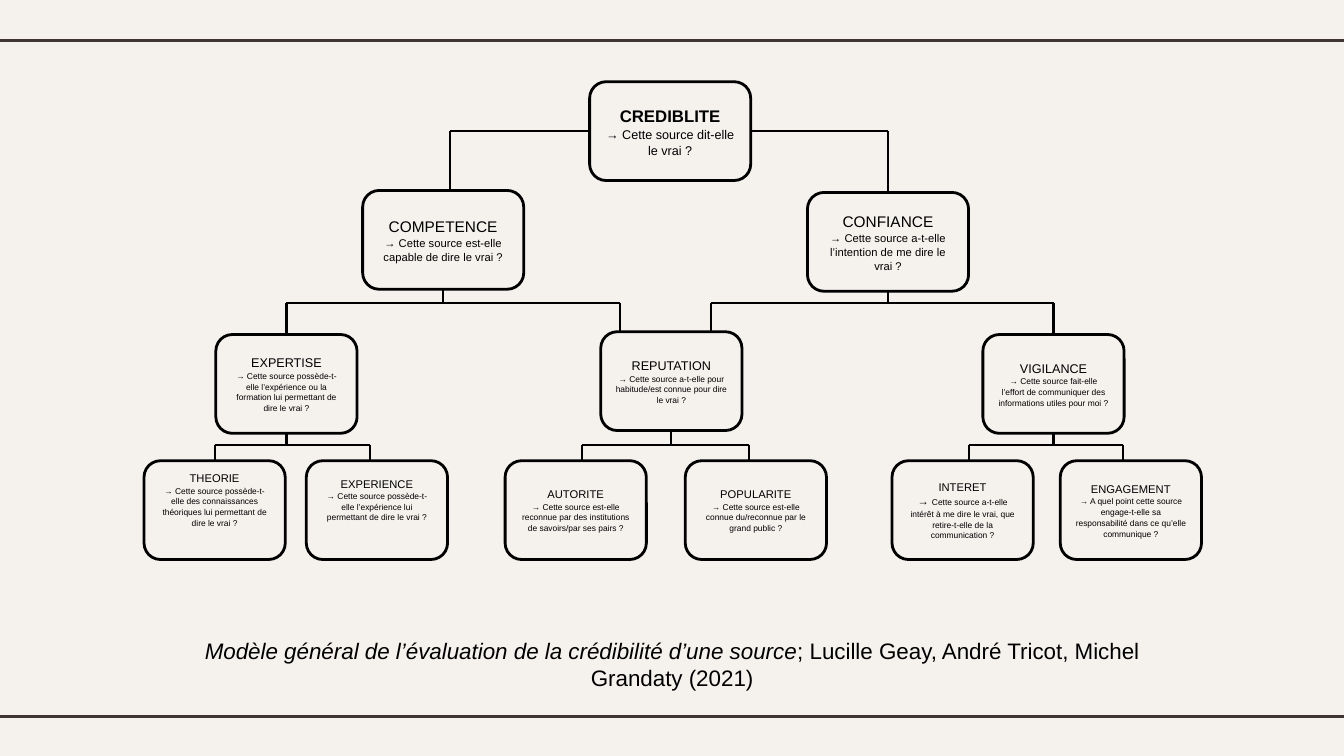
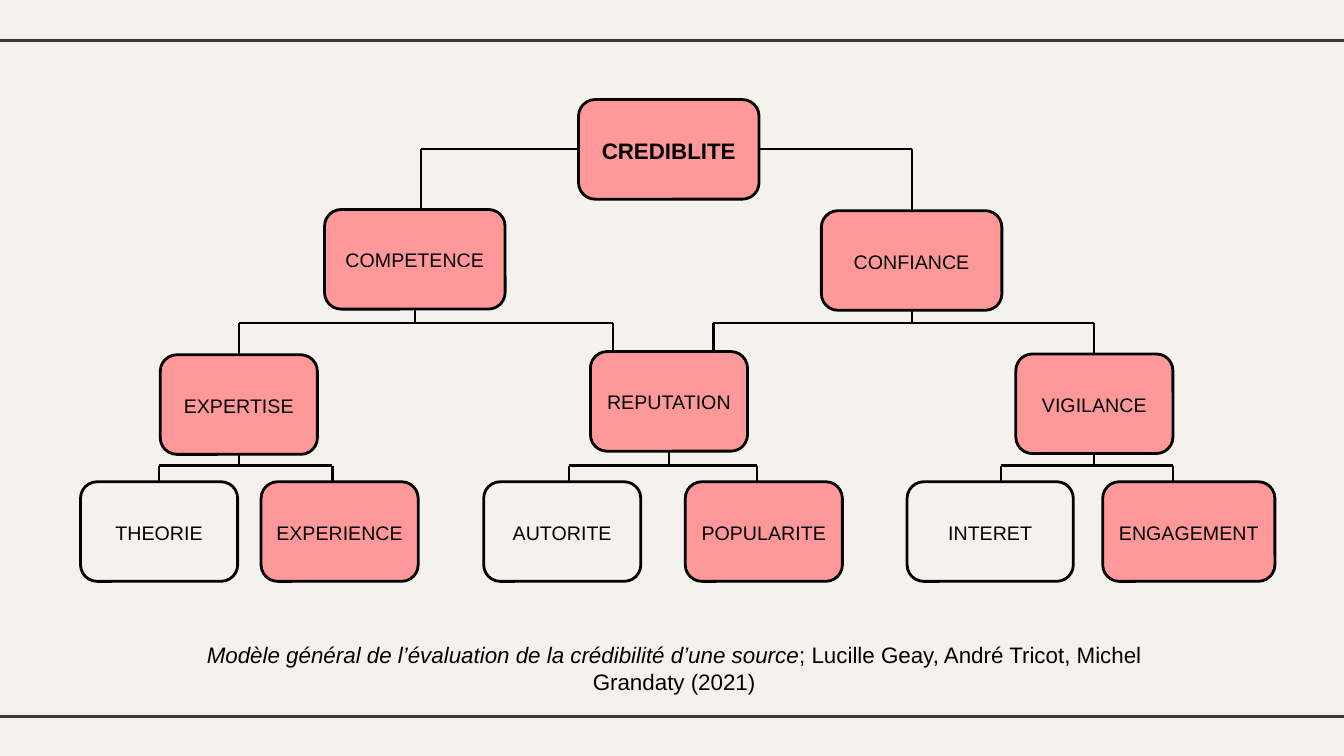
from dataclasses import dataclass

from lxml.etree import SubElement
from pptx import Presentation
from pptx.dml.color import RGBColor
from pptx.enum.shapes import MSO_CONNECTOR as Link, MSO_SHAPE as Shape
from pptx.enum.text import MSO_ANCHOR as Anchor, MSO_AUTO_SIZE as AutoSize, PP_ALIGN as Align
from pptx.oxml.ns import qn
from pptx.util import Cm, Pt

PAPER = RGBColor(0xF5, 0xF2, 0xEE)
INK = RGBColor(0x00, 0x00, 0x00)
RULE = RGBColor(0x3F, 0x35, 0x33)
PINK = RGBColor(0xFF, 0x99, 0x99)
FONT = "Arial"
WIDTH, HEIGHT = Cm(33.87), Cm(19.05)
TOP, LEFT, BOTTOM, RIGHT = range(4)

ROOT = "CREDIBLITE"
ROOT_CHILDREN = (("COMPETENCE", LEFT), ("CONFIANCE", RIGHT))
MIDDLE_BRANCHES = {
    "COMPETENCE": ("EXPERTISE", "REPUTATION"),
    "CONFIANCE": ("REPUTATION", "VIGILANCE"),
}
LEAF_BRANCHES = {
    "EXPERTISE": ("THEORIE", "EXPERIENCE"),
    "REPUTATION": ("AUTORITE", "POPULARITE"),
    "VIGILANCE": ("INTERET", "ENGAGEMENT"),
}


@dataclass
class Node:
    left: float
    top: float
    width: float
    title_size: int
    question: str = ""
    question_size: int = 6
    arrow_size: int = 6
    bottom_inset: float = 0.13
    fill: RGBColor = PAPER


@dataclass
class Tree:
    left: float
    top: float
    node_height: float
    middle_bar: float
    leaf_bar: float
    nodes: dict
    drops: dict


QUESTION_TREE = Tree(
    left=3.63, top=2.06, node_height=2.49, middle_bar=5.57, leaf_bar=9.15,
    nodes={
        ROOT: Node(11.23, 0, 4.06, 12, "Cette source dit-elle le vrai ?", 9, 9),
        "COMPETENCE": Node(5.51, 2.74, 4.06, 11,
                           "Cette source est-elle capable de dire le vrai ?", 8, 8),
        "CONFIANCE": Node(16.72, 2.79, 4.06, 11,
                          "Cette source a-t-elle l’intention de me dire le vrai ?", 8, 8),
        "EXPERTISE": Node(1.81, 6.37, 3.56, 9,
                          "Cette source possède-t-elle l’expérience ou la formation "
                          "lui permettant de dire le vrai ?"),
        "REPUTATION": Node(11.51, 6.3, 3.56, 9,
                           "Cette source a-t-elle pour habitude/est connue pour dire le vrai ?"),
        "VIGILANCE": Node(21.14, 6.37, 3.56, 9,
                          "Cette source fait-elle l’effort de communiquer des informations "
                          "utiles pour moi ?"),
        "THEORIE": Node(0, 9.55, 3.56, 8,
                        "Cette source possède-t-elle des connaissances théoriques "
                        "lui permettant de dire le vrai ?", bottom_inset=0.67),
        "EXPERIENCE": Node(4.09, 9.55, 3.56, 8,
                           "Cette source possède-t-elle l’expérience "
                           "lui permettant de dire le vrai ?", bottom_inset=0.67),
        "AUTORITE": Node(9.1, 9.55, 3.56, 8,
                         "Cette source est-elle reconnue par des institutions "
                         "de savoirs/par ses pairs ?"),
        "POPULARITE": Node(13.64, 9.55, 3.56, 8,
                           "Cette source est-elle connue du/reconnue par le grand public ?"),
        "INTERET": Node(18.85, 9.55, 3.56, 8,
                        "Cette source a-t-elle intérêt à me dire le vrai, "
                        "que retire-t-elle de la communication ?", arrow_size=8),
        "ENGAGEMENT": Node(23.09, 9.55, 3.56, 8,
                           "A quel point cette source engage-t-elle sa responsabilité "
                           "dans ce qu’elle communique ?"),
    },
    drops={
        (ROOT, "COMPETENCE"): 7.7,
        ("COMPETENCE", "REPUTATION"): 11.99,
        ("CONFIANCE", "REPUTATION"): 14.28,
        ("EXPERTISE", "EXPERIENCE"): 5.69,
        ("REPUTATION", "AUTORITE"): 11.03,
        ("REPUTATION", "POPULARITE"): 15.24,
        ("VIGILANCE", "INTERET"): 20.78,
        ("VIGILANCE", "ENGAGEMENT"): 24.67,
    },
)

HIGHLIGHT_TREE = Tree(
    left=2.03, top=2.51, node_height=2.51, middle_bar=5.62, leaf_bar=9.22,
    nodes={
        ROOT: Node(12.55, 0, 4.55, 16, fill=PINK),
        "COMPETENCE": Node(6.15, 2.77, 4.55, 14, fill=PINK),
        "CONFIANCE": Node(18.67, 2.8, 4.55, 14, fill=PINK),
        "EXPERTISE": Node(2.01, 6.43, 3.96, 14, fill=PINK),
        "REPUTATION": Node(12.85, 6.35, 3.96, 14, fill=PINK),
        "VIGILANCE": Node(23.57, 6.41, 3.96, 14, fill=PINK),
        "THEORIE": Node(0, 9.63, 3.96, 14),
        "EXPERIENCE": Node(4.55, 9.63, 3.96, 14, fill=PINK),
        "AUTORITE": Node(10.16, 9.63, 3.96, 14),
        "POPULARITE": Node(15.24, 9.63, 3.96, 14, fill=PINK),
        "INTERET": Node(20.83, 9.63, 4.19, 14),
        "ENGAGEMENT": Node(25.76, 9.63, 4.34, 14, fill=PINK),
    },
    drops={
        (ROOT, "COMPETENCE"): 8.59,
        ("COMPETENCE", "REPUTATION"): 13.41,
        ("CONFIANCE", "REPUTATION"): 15.95,
        ("EXPERTISE", "EXPERIENCE"): 6.35,
        ("REPUTATION", "AUTORITE"): 12.32,
        ("REPUTATION", "POPULARITE"): 17.05,
        ("VIGILANCE", "INTERET"): 23.19,
        ("VIGILANCE", "ENGAGEMENT"): 27.54,
    },
)


def add_text(para, text, *, size, bold=False, italic=False):
    span = para.add_run()
    span.text = text
    span.font.name = FONT
    span.font.size = Pt(size)
    span.font.bold = bold
    span.font.italic = italic
    span.font.color.rgb = INK


def add_line(page, start, end, color=INK, weight=1.5):
    line = page.shapes.add_connector(Link.STRAIGHT, *start, *end)
    line.line.color.rgb = color
    line.line.width = Pt(weight)
    SubElement(line._element.spPr, qn("a:effectLst"))
    return line


def add_node(page, tree, name):
    node = tree.nodes[name]
    box = page.shapes.add_shape(
        Shape.ROUNDED_RECTANGLE, Cm(tree.left + node.left), Cm(tree.top + node.top),
        Cm(node.width), Cm(tree.node_height))
    box.shadow.inherit = False
    box.fill.solid()
    box.fill.fore_color.rgb = node.fill
    box.line.color.rgb = INK
    box.line.width = Pt(2)
    frame = box.text_frame
    frame.word_wrap = True
    frame.vertical_anchor = Anchor.MIDDLE
    frame.margin_bottom = Cm(node.bottom_inset)
    add_text(frame.paragraphs[0], name, size=node.title_size, bold=name == ROOT)
    if node.question:
        para = frame.add_paragraph()
        add_text(para, "→ ", size=node.arrow_size)
        add_text(para, node.question, size=node.question_size)
    for para in frame.paragraphs:
        para.alignment = Align.CENTER
        para.line_spacing = 1.07
    return box


def center_x(box):
    return box.left + box.width // 2


def add_drop(page, tree, boxes, parent, child, bar_y):
    box = boxes[child]
    offset = tree.drops.get((parent, child))
    x = center_x(box) if offset is None else Cm(tree.left + offset)
    line = add_line(page, (x, bar_y), (x, box.top))
    if offset is None:
        line.end_connect(box, TOP)
    return x


def add_root_arms(page, tree, boxes):
    root = boxes[ROOT]
    y = root.top + root.height // 2
    for child, side in ROOT_CHILDREN:
        corner = add_drop(page, tree, boxes, ROOT, child, y)
        edge = root.left if side == LEFT else root.left + root.width
        add_line(page, (edge, y), (corner, y)).begin_connect(root, side)


def add_branches(page, tree, boxes, branches, bar_offset):
    bar_y = Cm(tree.top + bar_offset)
    for parent, children in branches.items():
        box = boxes[parent]
        x = center_x(box)
        stem = add_line(page, (x, box.top + box.height), (x, bar_y))
        stem.begin_connect(box, BOTTOM)
        ends = [add_drop(page, tree, boxes, parent, child, bar_y) for child in children]
        add_line(page, (min(ends), bar_y), (max(ends), bar_y))


def add_tree(page, tree):
    boxes = {name: add_node(page, tree, name) for name in tree.nodes}
    add_root_arms(page, tree, boxes)
    add_branches(page, tree, boxes, MIDDLE_BRANCHES, tree.middle_bar)
    add_branches(page, tree, boxes, LEAF_BRANCHES, tree.leaf_bar)


def add_caption(page, left, top):
    box = page.shapes.add_textbox(Cm(left), Cm(top), Cm(26.26), Cm(1.63))
    frame = box.text_frame
    frame.word_wrap = True
    frame.auto_size = AutoSize.SHAPE_TO_FIT_TEXT
    para = frame.paragraphs[0]
    para.alignment = Align.CENTER
    add_text(para, "Modèle général de l’évaluation de la crédibilité d’une source",
             size=16, italic=True)
    add_text(para, "; Lucille Geay, André Tricot, Michel Grandaty (2021)", size=16)


def add_page(deck, tree, caption_left, caption_top):
    page = deck.slides.add_slide(deck.slide_layouts[6])
    for y in (Cm(1.02), Cm(18.05)):
        add_line(page, (0, y), (WIDTH, y), RULE, 2.25)
    add_tree(page, tree)
    add_caption(page, caption_left, caption_top)


def main():
    deck = Presentation()
    deck.slide_width, deck.slide_height = WIDTH, HEIGHT
    background = deck.slide_master.background.fill
    background.solid()
    background.fore_color.rgb = PAPER
    add_page(deck, QUESTION_TREE, 3.81, 15.93)
    add_page(deck, HIGHLIGHT_TREE, 3.86, 16.03)
    deck.save("out.pptx")


if __name__ == "__main__":
    main()
